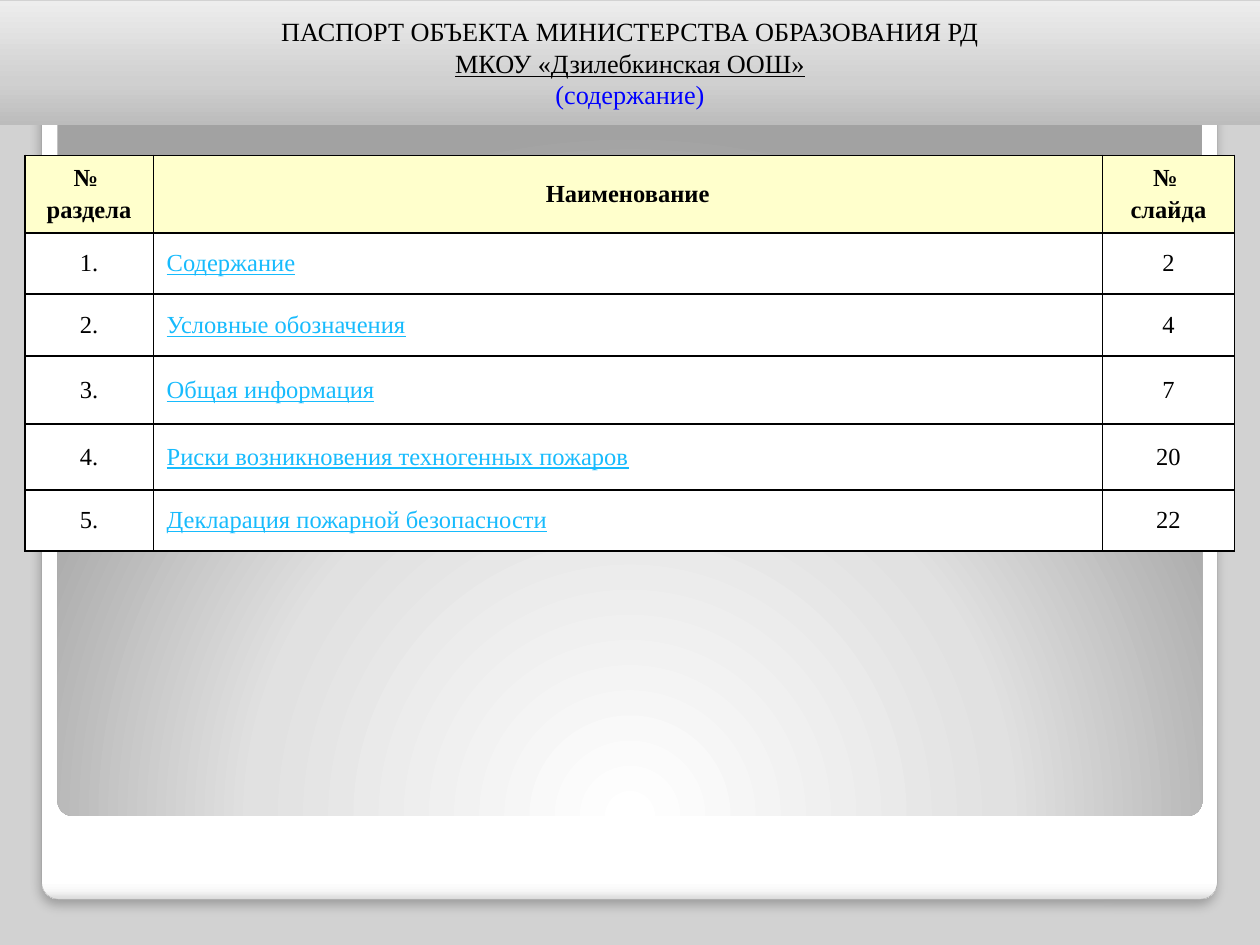
from lxml.etree import SubElement
from pptx import Presentation
from pptx.dml.color import RGBColor
from pptx.enum.shapes import MSO_SHAPE as Preset
from pptx.enum.text import MSO_ANCHOR as Anchor, MSO_AUTO_SIZE as AutoSize, PP_ALIGN as Align
from pptx.oxml.ns import qn
from pptx.util import Cm, Pt

COLORS = {
    "background": "D2D2D2", "text": "000000", "link": "17BBFD", "note": "0000FF",
    "header": "FFFFCC", "body": "FFFFFF", "frame": "A4A4A4",
}
FRAME_STOPS = [(0, "FFFFFF"), (98, "FFFFFF"), (99, "F7F7F7"), (100, "DADADA")]
PANEL_STOPS = [(0, "FFFFFF"), (55, "E1E1E1"), (100, "A2A2A2")]
BANNER_STOPS = [(0, "BCBCBC"), (35, "D0D0D0"), (100, "EDEDED")]

HEADING = [
    ("ПАСПОРТ ОБЪЕКТА МИНИСТЕРСТВА ОБРАЗОВАНИЯ РД", {}),
    ("МКОУ «Дзилебкинская ООШ»", {"underline": True}),
    ("(содержание)", {"color": "note"}),
]
COLUMN_TITLES = ("№ \nраздела", "Наименование", "№ \nслайда")
SECTIONS = [
    ("Содержание", 2),
    ("Условные обозначения", 4),
    ("Общая информация", 7),
    ("Риски возникновения техногенных пожаров", 20),
    ("Декларация пожарной безопасности", 22),
]
COLUMN_WIDTHS = (2.59, 19.13, 2.67)
ROW_HEIGHTS = (1.57, 1.23, 1.25, 1.37, 1.33, 1.23)


def rgb(name):
    return RGBColor.from_string(COLORS[name])


def add_xml(parent, tag, **attributes):
    return SubElement(parent, qn(tag), {key: str(value) for key, value in attributes.items()})


class SlideBuilder:
    font_name = "Times New Roman"

    def __init__(self, slide):
        self.slide = slide
        slide.background.fill.solid()
        slide.background.fill.fore_color.rgb = rgb("background")

    def gradient(self, shape, stops, angle=None, center=None):
        """Fill linearly at a clockwise angle, or in circles around a center rectangle."""
        shape.fill.gradient()
        gradient = shape._element.spPr.find(qn("a:gradFill"))
        for child in list(gradient):
            gradient.remove(child)
        stop_list = add_xml(gradient, "a:gsLst")
        for position, color in stops:
            stop = add_xml(stop_list, "a:gs", pos=position * 1000)
            add_xml(stop, "a:srgbClr", val=color)
        if center:
            circle = add_xml(gradient, "a:path", path="circle")
            add_xml(circle, "a:fillToRect", **{side: part * 1000 for side, part in center.items()})
        else:
            add_xml(gradient, "a:lin", ang=angle * 60000, scaled=0)

    def panel(self, left, top, width, height, stops, **direction):
        panel = self.slide.shapes.add_shape(
            Preset.ROUNDED_RECTANGLE, Cm(left), Cm(top), Cm(width), Cm(height))
        panel.adjustments[0] = 0.02
        panel.shadow.inherit = False
        panel.line.fill.background()
        self.gradient(panel, stops, **direction)
        return panel

    def outline(self, shape, color, width):
        shape.line.color.rgb = rgb(color)
        shape.line.width = Pt(width)

    def drop_shadow(self, shape):
        effects = shape._element.spPr.find(qn("a:effectLst"))
        shadow = add_xml(effects, "a:outerShdw", blurRad=Pt(6), dist=Pt(4),
                         dir=90 * 60000, algn="t", rotWithShape=0)
        tint = add_xml(shadow, "a:srgbClr", val=COLORS["text"])
        add_xml(tint, "a:alpha", val=25000)

    def text_line(self, paragraph, text, align=Align.CENTER, color="text", **font_format):
        paragraph.alignment = align
        run = paragraph.add_run()
        run.text = text
        run.font.color.rgb = rgb(color)
        for attribute, value in {"name": self.font_name, **font_format}.items():
            setattr(run.font, attribute, value)

    def banner(self, left, top, width, height, lines):
        title = self.slide.shapes.title
        placement = {"left": left, "top": top, "width": width, "height": height}
        for attribute, value in placement.items():
            setattr(title, attribute, Cm(value))
        self.gradient(title, BANNER_STOPS, angle=270)
        frame = title.text_frame
        frame_format = {"word_wrap": True, "auto_size": AutoSize.NONE,
                        "vertical_anchor": Anchor.MIDDLE}
        for attribute, value in frame_format.items():
            setattr(frame, attribute, value)
        for index, (text, line_format) in enumerate(lines):
            paragraph = frame.add_paragraph() if index else frame.paragraphs[0]
            self.text_line(paragraph, text, size=Pt(15), **line_format)
        # The banner lies over the panels, so it goes to the front
        self.slide.shapes._spTree.append(title._element)

    def border(self, cell):
        properties = cell._tc.get_or_add_tcPr()
        for index, side in enumerate(("a:lnL", "a:lnR", "a:lnT", "a:lnB")):
            edge = properties.makeelement(qn(side), {"w": str(Pt(1))})
            add_xml(add_xml(edge, "a:solidFill"), "a:srgbClr", val=COLORS["text"])
            properties.insert(index, edge)

    def cell(self, cell, text, fill, space=0, **text_format):
        cell.fill.solid()
        cell.fill.fore_color.rgb = rgb(fill)
        cell.vertical_anchor = Anchor.MIDDLE
        cell.margin_left = cell.margin_right = Cm(0.27)
        self.border(cell)
        frame = cell.text_frame
        for index, line in enumerate(text.split("\n")):
            paragraph = frame.add_paragraph() if index else frame.paragraphs[0]
            paragraph.space_before = Pt(space)
            self.text_line(paragraph, line, size=Pt(14), **text_format)

    def contents_table(self, left, top):
        table = self.slide.shapes.add_table(
            len(ROW_HEIGHTS), len(COLUMN_WIDTHS), Cm(left), Cm(top),
            Cm(sum(COLUMN_WIDTHS)), Cm(sum(ROW_HEIGHTS))).table
        for column, width in zip(table.columns, COLUMN_WIDTHS):
            column.width = Cm(width)
        for row, height in zip(table.rows, ROW_HEIGHTS):
            row.height = Cm(height)
        for column, heading in enumerate(COLUMN_TITLES):
            self.cell(table.cell(0, column), heading, "header", space=2.8, bold=True)
        for number, (section, page) in enumerate(SECTIONS, start=1):
            self.cell(table.cell(number, 0), f"{number}.", "body")
            self.cell(table.cell(number, 1), section, "body",
                      align=Align.LEFT, color="link", underline=True)
            self.cell(table.cell(number, 2), str(page), "body")


def main():
    deck = Presentation()
    deck.slide_width, deck.slide_height = Cm(25.4), Cm(19.05)
    builder = SlideBuilder(deck.slides.add_slide(deck.slide_layouts[5]))
    frame = builder.panel(0.84, 0.91, 23.7, 17.22, FRAME_STOPS, angle=90)
    builder.outline(frame, "frame", 0.16)
    builder.drop_shadow(frame)
    builder.panel(1.16, 1.2, 23.08, 15.25, PANEL_STOPS,
                  center={"l": 50, "t": 175, "r": 50, "b": -75})
    builder.contents_table(0.5, 3.13)
    builder.banner(0, 0.02, 25.4, 2.5, HEADING)
    deck.save("out.pptx")


if __name__ == "__main__":
    main()
